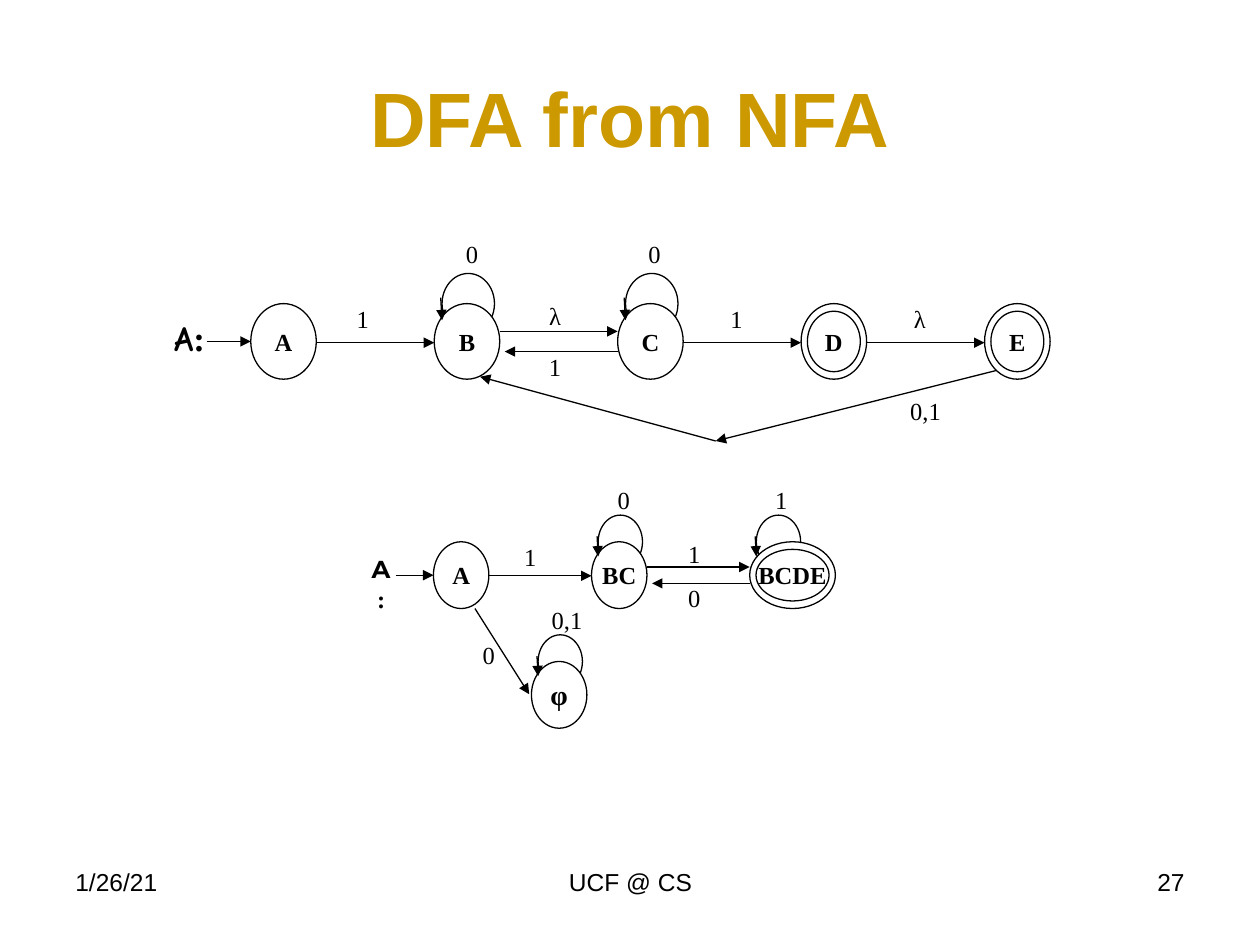
from pptx import Presentation
from pptx.dml.color import RGBColor
from pptx.enum.shapes import MSO_CONNECTOR as CONN, MSO_SHAPE as SHAPE
from pptx.enum.text import MSO_ANCHOR as ANCHOR, PP_ALIGN as ALIGN
from pptx.oxml.ns import qn
from pptx.util import Inches, Pt
from lxml.etree import SubElement

W, H = 10, 7.5
SERIF, SANS = "Times New Roman", "Arial"
BLACK, WHITE, GOLD = "000000", "FFFFFF", "CC9900"
L, C, R = ALIGN.LEFT, ALIGN.CENTER, ALIGN.RIGHT

TITLE = "DFA from NFA"
FOOTERS = [("1/26/21", 0.5, 2.33, L), ("UCF @ CS", 3.42, 3.17, C), ("27", 7.17, 2.33, R)]

NFA = {
    "origin": (1.99, 2.41), "pitch": 1.456, "size": (0.52, 0.6),
    "name": ("A", "Comic Neue", 20, 1.27, 2.46, 0.47), "start": 0.35,
    "states": [
        dict(name="A", col=0),
        dict(name="B", col=1, loop=True),
        dict(name="C", col=2, loop=True),
        dict(name="D", col=3, accept=True),
        dict(name="E", col=4, accept=True),
    ],
    "edges": [("A", "B", 0.31), ("B", "C", 0.22), ("C", "B", 0.38),
              ("C", "D", 0.31), ("D", "E", 0.31)],
    "slants": [(7.91, 2.94, 5.68, 3.5), (5.68, 3.5, 3.81, 2.99)],
    "labels": [("1", 2.83, 2.41, 0.21, L), ("λ", 4.3, 2.39, 0.21, C),
               ("1", 4.3, 2.79, 0.21, C), ("0", 3.64, 1.9, 0.21, C),
               ("0", 5.09, 1.9, 0.21, C), ("1", 5.74, 2.41, 0.21, C),
               ("λ", 7.1, 2.41, 0.4, C), ("0,1", 7.14, 3.14, 0.41, C)],
}
DFA = {
    "origin": (3.44, 4.3), "pitch": 1.255, "size": (0.44, 0.53),
    "name": ("A", "Montserrat", 14, 2.82, 4.35, 0.41), "start": 0.3,
    "states": [
        dict(name="A", col=0),
        dict(name="BC", col=1, loop=True),
        dict(name="BCDE", col=2, width=0.68, loop=True, accept=True),
        dict(name="φ", col=0.62, drop=0.95, loop=True, size=16),
    ],
    "edges": [("A", "BC", 0.27), ("BC", "BCDE", 0.2), ("BCDE", "BC", 0.33)],
    "slants": [(3.77, 4.83, 4.2, 5.51)],
    "labels": [("1", 4.16, 4.3, 0.18, L), ("1", 5.42, 4.28, 0.18, C),
               ("0", 5.42, 4.63, 0.18, C), ("0", 4.86, 3.85, 0.18, C),
               ("1", 6.11, 3.85, 0.18, C), ("0,1", 4.3, 4.8, 0.4, C),
               ("0", 3.83, 5.08, 0.18, L)],
}


def rgb(value):
    return RGBColor.from_string(value)


def write(tf, text, font=SERIF, size=14, bold=False, color=BLACK, align=C,
          inset=None, wrap=True, anchor=ANCHOR.TOP):
    tf.word_wrap, tf.vertical_anchor = wrap, anchor
    if inset is not None:
        tf.margin_left = tf.margin_right = tf.margin_top = tf.margin_bottom = Inches(inset)
    p = tf.paragraphs[0]
    p.alignment = align
    r = p.add_run()
    r.text = text
    r.font.name, r.font.size, r.font.bold = font, Pt(size), bold
    r.font.color.rgb = rgb(color)
    return p


def textbox(s, text, x, y, w, h, **fmt):
    sp = s.shapes.add_textbox(*map(Inches, (x, y, w, h)))
    return write(sp.text_frame, text, **fmt)


def ellipse(s, x, y, w, h):
    sp = s.shapes.add_shape(SHAPE.OVAL, *map(Inches, (x, y, w, h)))
    sp.shadow.inherit = False
    sp.fill.solid()
    sp.fill.fore_color.rgb = rgb(WHITE)
    sp.line.color.rgb = rgb(BLACK)
    sp.line.width = Pt(0.75)
    return sp


def arrow(s, x1, y1, x2, y2):
    cn = s.shapes.add_connector(CONN.STRAIGHT, *map(Inches, (x1, y1, x2, y2)))
    cn.line.color.rgb = rgb(BLACK)
    cn.line.width = Pt(0.75)
    SubElement(cn.line._get_or_add_ln(), qn("a:tailEnd"), type="triangle")
    SubElement(cn._element.spPr, qn("a:effectLst"))


def draw_state(s, x, y, w, h, unit, state):
    if state.get("loop"):
        ellipse(s, x + 0.12 * unit, y - 0.4 * h, 0.8 * unit, 0.8 * h)
    sp = ellipse(s, x, y, w, h)
    if state.get("accept"):
        sp = ellipse(s, x + 0.05, y + 0.06, w - 0.1, h - 0.12)
    write(sp.text_frame, state["name"], size=state.get("size", 14), bold=True,
          inset=0, wrap=False, anchor=ANCHOR.MIDDLE)
    if state.get("loop"):
        arrow(s, x + 0.1 * unit, y - 0.08 * h, x + 0.12 * unit, y + 0.22 * h)


def draw_machine(s, m):
    (x0, y0), (unit, h) = m["origin"], m["size"]
    spans = {}
    for state in m["states"]:
        x, w = x0 + state["col"] * m["pitch"], state.get("width", unit)
        draw_state(s, x, y0 + state.get("drop", 0), w, h, unit, state)
        spans[state["name"]] = x, x + w

    arrow(s, x0 - m["start"], y0 + h / 2, x0, y0 + h / 2)
    for a, b, dy in m["edges"]:
        if spans[a] < spans[b]:
            x1, x2 = spans[a][1], spans[b][0]
        else:
            x1, x2 = spans[a][0], spans[b][1] + 0.04
        arrow(s, x1, y0 + dy, x2, y0 + dy)
    for ends in m["slants"]:
        arrow(s, *ends)

    for text, x, y, w, align in m["labels"]:
        textbox(s, text, x, y, w, 0.3, align=align, inset=0)
    name, font, size, x, y, w = m["name"]
    p = textbox(s, name, x, y, w, 0.36, font=font, size=size, bold=True)
    r = p.add_run()
    r.text = ":"
    r.font.name, r.font.size, r.font.bold = SERIF, Pt(size), True
    r.font.color.rgb = rgb(BLACK)


def main():
    prs = Presentation()
    prs.slide_width, prs.slide_height = Inches(W), Inches(H)
    s = prs.slides.add_slide(prs.slide_layouts[5])
    title = s.shapes.title
    title.left, title.top, title.width, title.height = map(Inches, (0.5, 0.3, 9, 1.25))
    write(title.text_frame, TITLE, font=SANS, size=44, bold=True, color=GOLD,
          anchor=ANCHOR.MIDDLE)
    for text, x, w, align in FOOTERS:
        textbox(s, text, x, 6.83, w, 0.52, font=SANS, align=align)
    for m in (DFA, NFA):
        draw_machine(s, m)
    prs.save("out.pptx")


if __name__ == "__main__":
    main()
